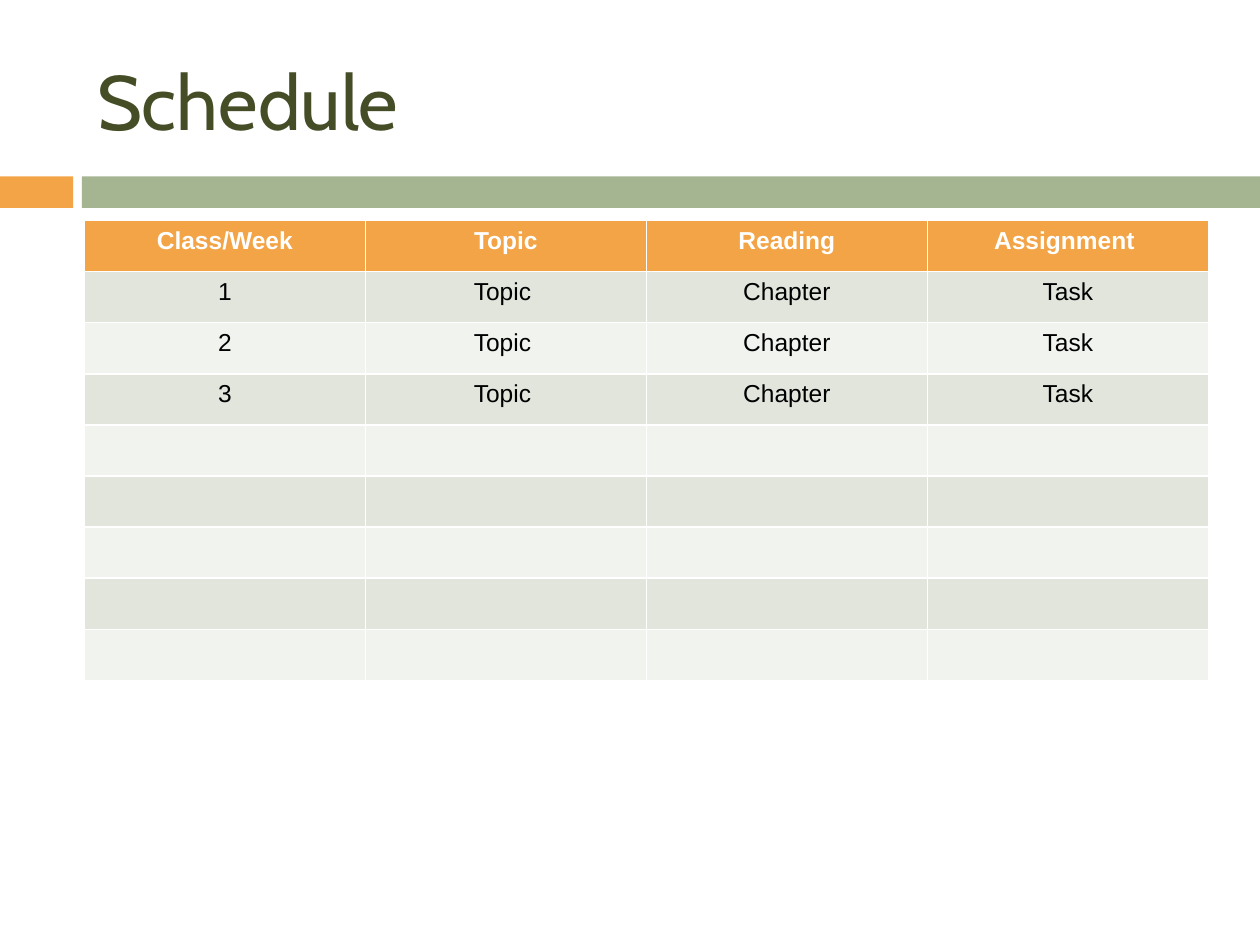
"""Build the class schedule slide with its title, accent bars and table."""
from pptx import Presentation
from pptx.dml.color import RGBColor
from pptx.enum.shapes import MSO_SHAPE
from pptx.enum.text import MSO_ANCHOR, PP_ALIGN
from pptx.util import Inches, Pt

THEME = {
    "title": RGBColor.from_string("444D26"),
    "accent": RGBColor.from_string("F3A447"),
    "bar": RGBColor.from_string("A5B592"),
    "bands": [RGBColor.from_string("F0F3EE"), RGBColor.from_string("E1E5DC")],
    "head": RGBColor.from_string("FFFFFF"),
    "body": RGBColor.from_string("000000"),
    "title_font": "Cabin",
    "body_font": "Arial",
    "title_size": Pt(44),
    "body_size": Pt(14),
}
HEADS = ["Class/Week", "Topic", "Reading", "Assignment "]
WEEKS = [[str(week), "Topic ", "Chapter", "Task"] for week in range(1, 4)]
ROWS = 9
COLS = len(HEADS)


def write(frame, text, font, size, color, align, bold=False):
    para = frame.paragraphs[0]
    para.alignment = align
    run = para.add_run()
    run.text = text
    run.font.name = font
    run.font.size = size
    run.font.bold = bold
    run.font.color.rgb = color


deck = Presentation()
deck.slide_width, deck.slide_height = Inches(10), Inches(7.5)
slide = deck.slides.add_slide(deck.slide_layouts[5])
left, width = Inches(0.67), Inches(8.92)

split = Inches(0.65)
bars = [(0, Inches(0.58), THEME["accent"]),
        (split, deck.slide_width - split, THEME["bar"])]
for x, span, color in bars:
    bar = slide.shapes.add_shape(MSO_SHAPE.RECTANGLE, x, Inches(1.4), span, Inches(0.25))
    bar.shadow.inherit = False
    bar.fill.solid()
    bar.fill.fore_color.rgb = color
    bar.line.fill.background()

title = slide.shapes.title
title.left, title.top = left, Inches(0.25)
title.width, title.height = width, Inches(1.08)
title.text_frame.vertical_anchor = MSO_ANCHOR.MIDDLE
write(title.text_frame, "Schedule", THEME["title_font"], THEME["title_size"],
      THEME["title"], PP_ALIGN.LEFT)

table = slide.shapes.add_table(ROWS, COLS, left, Inches(1.75), width, Inches(3.65)).table
for r in range(ROWS):
    for c in range(COLS):
        cell = table.cell(r, c)
        cell.fill.solid()
        cell.fill.fore_color.rgb = THEME["bands"][r % 2] if r else THEME["accent"]

for r, row in enumerate([HEADS] + WEEKS):
    for c, text in enumerate(row):
        write(table.cell(r, c).text_frame, text, THEME["body_font"], THEME["body_size"],
              THEME["body" if r else "head"], PP_ALIGN.CENTER, bold=r == 0)

deck.save("out.pptx")
